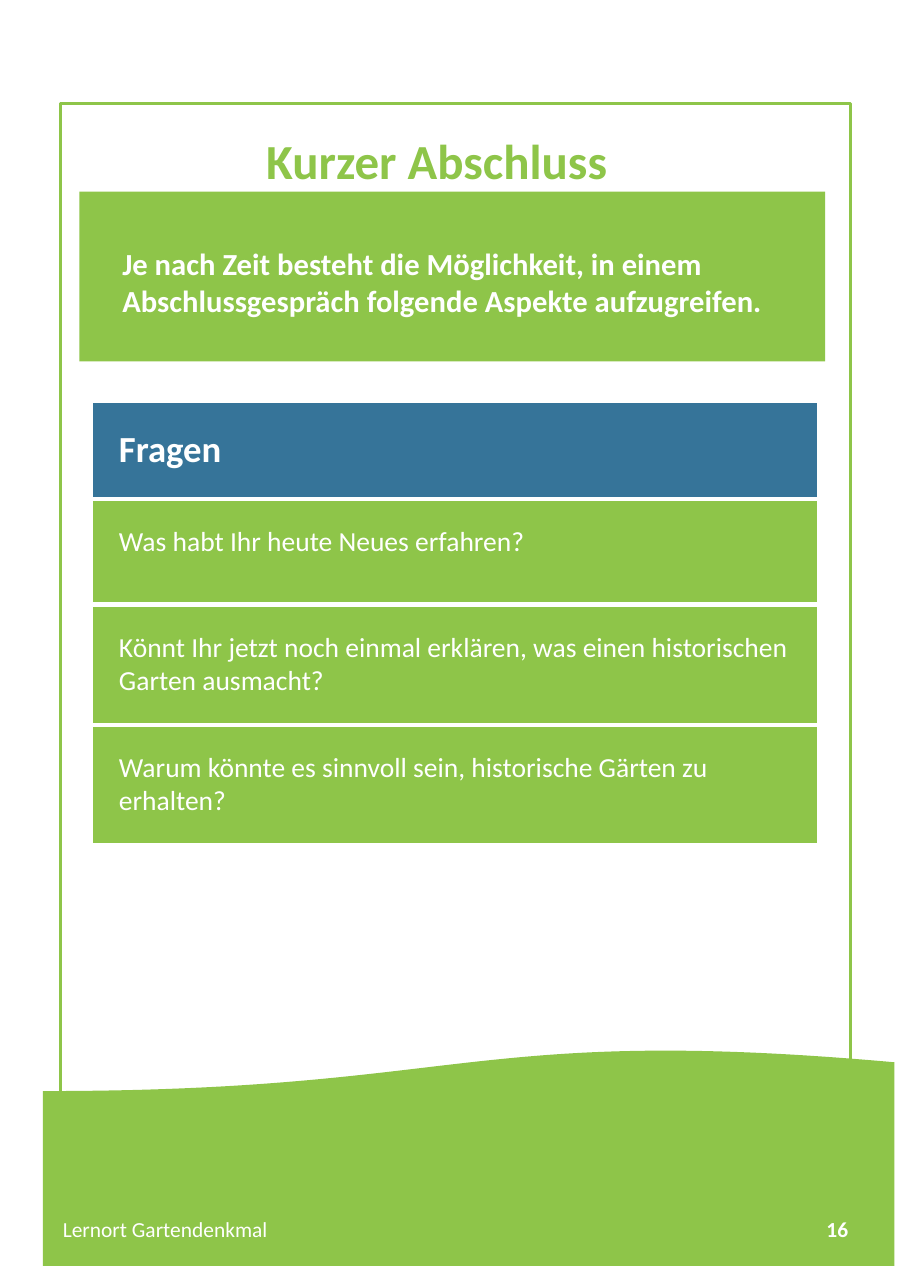
from pptx import Presentation
from pptx import util as u
from pptx.dml.color import RGBColor
from pptx.enum import shapes, text
from pptx.oxml import parse_xml

GREEN = RGBColor(0x8E, 0xC5, 0x49)
BLUE = RGBColor(0x36, 0x74, 0x99)
WHITE = RGBColor(0xFF, 0xFF, 0xFF)
FONT = "Calibri"

# Content
TITLE = "Kurzer Abschluss"
INTRO = ("Je nach Zeit besteht die Möglichkeit, in einem "
         "Abschlussgespräch folgende Aspekte aufzugreifen.")
HEADING = "Fragen"
QUESTIONS = [
    "Was habt Ihr heute Neues erfahren?",
    "Könnt Ihr jetzt noch einmal erklären, was einen historischen Garten ausmacht?",
    "Warum könnte es sinnvoll sein, historische Gärten zu erhalten?",
]
FOOTER = "Lernort Gartendenkmal"
PAGE_NUMBER = "16"

# Layout in inches: left, top, width, height
HILL = (0.39, 9.51, 7.73, 1.98)
FRAME = (0.55, 0.94, 7.17, 9.82)
TITLE_BOX = (0.72, 1.02, 6.49, 1.09)
INTRO_BOX = (0.72, 1.74, 6.77, 1.54)
FOOTER_BOX = (0.57, 10.84, 2.02, 0.62)
NUMBER_BOX = (5.84, 10.84, 1.86, 0.62)
TABLE_LEFT, TABLE_TOP, TABLE_WIDTH = 0.84, 3.64, 6.58
ROW_HEIGHTS = [0.88, 0.96, 1.08, 1.08]
CELL_MARGIN = 0.24
BOX_MARGINS = (0.39, 0.2, 0.39, 0.39)

LEFT, CENTER, RIGHT = (text.PP_ALIGN.LEFT, text.PP_ALIGN.CENTER,
                       text.PP_ALIGN.RIGHT)
MIDDLE, BOTTOM = text.MSO_ANCHOR.MIDDLE, text.MSO_ANCHOR.BOTTOM
BORDER = ('<a:{side} xmlns:a="http://schemas.openxmlformats.org/drawingml/2006/main"'
          ' w="{width}">{fill}</a:{side}>')


def inches(values):
    return [u.Inches(value) for value in values]


def write(paragraph, words, size, color, bold=False, align=LEFT):
    paragraph.alignment = align
    run = paragraph.add_run()
    run.text = words
    run.font.name = FONT
    run.font.size = u.Pt(size)
    run.font.bold = bold
    run.font.color.rgb = color


def fill_box(shape, words, size, color, margins, anchor, bold=False, align=LEFT):
    frame = shape.text_frame
    frame.word_wrap = True
    frame.auto_size = text.MSO_AUTO_SIZE.NONE
    frame.vertical_anchor = anchor
    (frame.margin_left, frame.margin_top,
     frame.margin_right, frame.margin_bottom) = inches(margins)
    write(frame.paragraphs[0], words, size, color, bold, align)


def add_plain_shape(slide, kind, box, fill=None, line=None):
    shape = slide.shapes.add_shape(kind, *inches(box))
    shape.shadow.inherit = False
    if fill is None:
        shape.fill.background()
    else:
        shape.fill.solid()
        shape.fill.fore_color.rgb = fill
    if line is None:
        shape.line.fill.background()
    else:
        shape.line.color.rgb = line
        shape.line.width = u.Pt(2.25)
    return shape


def set_borders(cell):
    white = f'<a:solidFill><a:srgbClr val="{WHITE}"/></a:solidFill>'
    sides = [("lnL", 0, "<a:noFill/>"), ("lnR", 0, "<a:noFill/>"),
             ("lnT", u.Pt(3), white), ("lnB", u.Pt(3), white)]
    properties = cell._tc.get_or_add_tcPr()
    for position, (side, width, fill) in enumerate(sides):
        border = BORDER.format(side=side, width=int(width), fill=fill)
        properties.insert(position, parse_xml(border))


def add_question_table(slide):
    box = (TABLE_LEFT, TABLE_TOP, TABLE_WIDTH, sum(ROW_HEIGHTS))
    rows = [HEADING] + QUESTIONS
    table = slide.shapes.add_table(len(rows), 1, *inches(box)).table
    for index, (words, height) in enumerate(zip(rows, ROW_HEIGHTS)):
        table.rows[index].height = u.Inches(height)
        is_heading = index == 0
        cell = table.cell(index, 0)
        cell.margin_left = cell.margin_right = u.Inches(CELL_MARGIN)
        cell.margin_top = cell.margin_bottom = u.Inches(CELL_MARGIN)
        cell.fill.solid()
        cell.fill.fore_color.rgb = BLUE if is_heading else GREEN
        set_borders(cell)
        write(cell.text_frame.paragraphs[0], words,
              24 if is_heading else 18, WHITE, is_heading)


def main():
    presentation = Presentation()
    presentation.slide_width = u.Inches(8.27)
    presentation.slide_height = u.Inches(11.69)
    slide = presentation.slides.add_slide(presentation.slide_layouts[5])

    # Title
    title = slide.shapes.title
    title.left, title.top, title.width, title.height = inches(TITLE_BOX)
    fill_box(title, TITLE, 32, GREEN, BOX_MARGINS, BOTTOM, True, CENTER)

    # Hill with footer and page number
    hill = add_plain_shape(slide, shapes.MSO_SHAPE.FLOWCHART_DOCUMENT, HILL, GREEN)
    hill.rotation = 180
    footer = slide.shapes.add_textbox(*inches(FOOTER_BOX))
    fill_box(footer, FOOTER, 14, WHITE, (0, 0.05, 0.1, 0.05), MIDDLE)
    number = slide.shapes.add_textbox(*inches(NUMBER_BOX))
    fill_box(number, PAGE_NUMBER, 14, WHITE, (0.1, 0.05, 0, 0.05), MIDDLE,
             True, RIGHT)

    # Frame, questions and introduction
    add_plain_shape(slide, shapes.MSO_SHAPE.RECTANGLE, FRAME, line=GREEN)
    add_question_table(slide)
    intro = add_plain_shape(slide, shapes.MSO_SHAPE.RECTANGLE, INTRO_BOX, GREEN)
    fill_box(intro, INTRO, 20, WHITE, BOX_MARGINS, BOTTOM, True)

    presentation.save("out.pptx")


if __name__ == "__main__":
    main()
